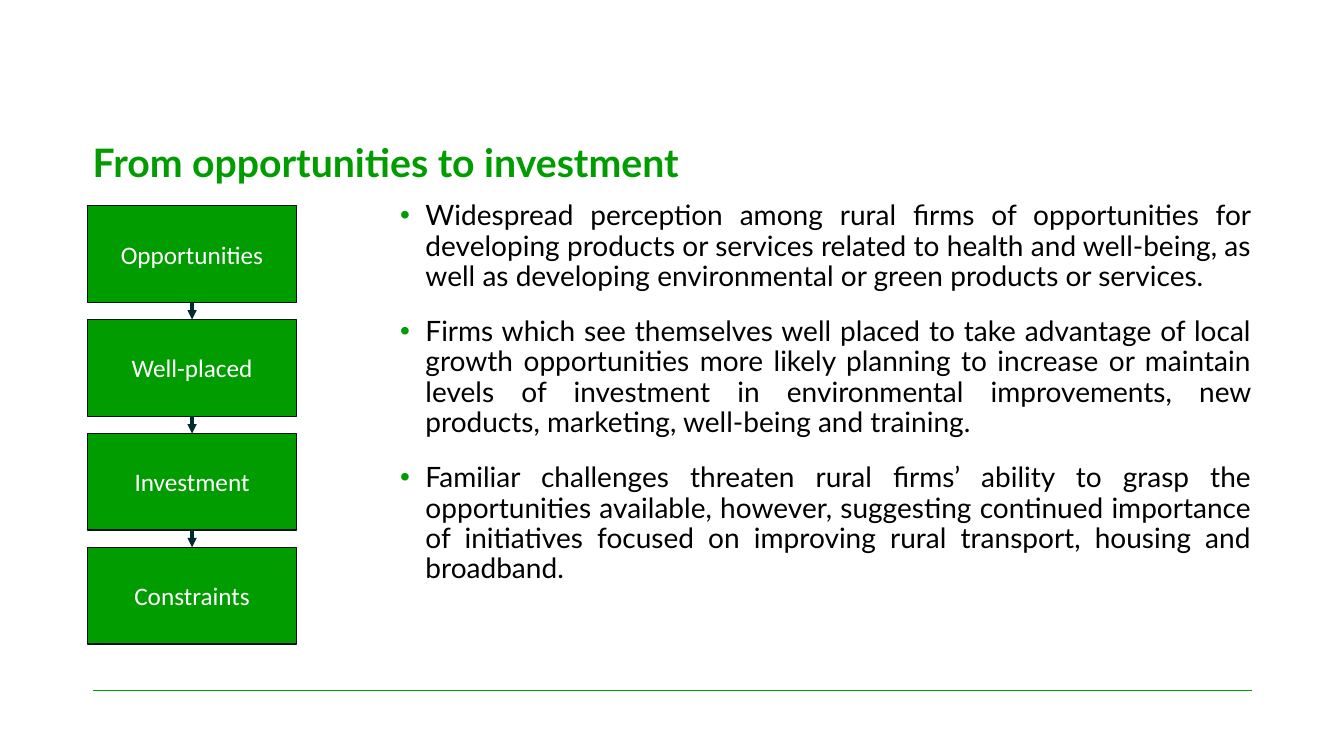
from lxml.etree import SubElement
from pptx import Presentation
from pptx.dml.color import RGBColor
from pptx.enum.shapes import MSO_CONNECTOR, MSO_SHAPE
from pptx.enum.text import MSO_ANCHOR, PP_ALIGN
from pptx.oxml.ns import qn
from pptx.util import Inches, Pt

TITLE = "From opportunities to investment"
STEPS = ["Opportunities", "Well-placed", "Investment", "Constraints"]
POINTS = [
    "Widespread perception among rural firms of opportunities for developing products or services "
    "related to health and well-being, as well as developing environmental or green products or services.",
    "Firms which see themselves well placed to take advantage of local growth opportunities more likely "
    "planning to increase or maintain levels of investment in environmental improvements, new products, "
    "marketing, well-being and training.",
    "Familiar challenges threaten rural firms’ ability to grasp the opportunities available, however, "
    "suggesting continued importance of initiatives focused on improving rural transport, housing and "
    "broadband.",
]

GREEN = RGBColor(0x00, 0x9C, 0x00)
BLACK = RGBColor(0x00, 0x00, 0x00)
WHITE = RGBColor(0xFF, 0xFF, 0xFF)
OUTLINE = RGBColor(0x00, 0x13, 0x15)
ARROW = RGBColor(0x00, 0x2C, 0x2F)

TITLE_FONT = {"name": "Lato", "size": Pt(28), "bold": True}
BODY_FONT = {"name": "Lato", "size": Pt(20)}
STEP_FONT = {"name": "Calibri", "size": Pt(18)}
NO_MARGINS = {f"margin_{side}": 0 for side in ("left", "top", "right", "bottom")}

STEP_LEFT, STEP_TOP, STEP_WIDTH, STEP_HEIGHT, STEP_PITCH = 0.87, 2.04, 2.07, 0.96, 1.13


def set_values(target, values):
    for name, value in values.items():
        setattr(target, name, value)


def write(para, text, font, color):
    span = para.add_run()
    span.text = text
    set_values(span.font, font)
    span.font.color.rgb = color


def add_text_box(page, left, top, width, height, anchor):
    box = page.shapes.add_textbox(Inches(left), Inches(top), Inches(width), Inches(height))
    set_values(box.text_frame, {"word_wrap": True, "vertical_anchor": anchor, **NO_MARGINS})
    return box.text_frame


def add_bullet(para):
    """Give the paragraph a green bullet with a hanging indent."""
    properties = para._p.get_or_add_pPr()
    properties.set("marL", str(Inches(0.25)))
    properties.set("indent", str(Inches(-0.25)))
    color = SubElement(properties, qn("a:buClr"))
    SubElement(color, qn("a:srgbClr"), val=str(GREEN))
    SubElement(properties, qn("a:buFont"), typeface="Arial")
    SubElement(properties, qn("a:buChar"), char="•")


def add_line(page, start, end, color, width):
    line = page.shapes.add_connector(
        MSO_CONNECTOR.STRAIGHT, *(Inches(value) for value in (*start, *end)))
    line.line.color.rgb = color
    line.line.width = Pt(width)
    SubElement(line._element.spPr, qn("a:effectLst"))
    return line


def add_step(page, index, label):
    box = page.shapes.add_shape(
        MSO_SHAPE.RECTANGLE, Inches(STEP_LEFT), Inches(STEP_TOP + index * STEP_PITCH),
        Inches(STEP_WIDTH), Inches(STEP_HEIGHT))
    box.shadow.inherit = False
    box.fill.solid()
    box.fill.fore_color.rgb = GREEN
    box.line.color.rgb = OUTLINE
    box.line.width = Pt(1)
    box.text_frame.vertical_anchor = MSO_ANCHOR.MIDDLE
    para = box.text_frame.paragraphs[0]
    para.alignment = PP_ALIGN.CENTER
    write(para, label, STEP_FONT, WHITE)
    return box


def join_steps(page, upper, lower):
    arrow = add_line(page, (0, 0), (0, 0), ARROW, 2.25)
    arrow.begin_connect(upper, 2)
    arrow.end_connect(lower, 0)
    SubElement(arrow.line._get_or_add_ln(), qn("a:tailEnd"), type="triangle")


def main():
    deck = Presentation()
    deck.slide_width, deck.slide_height = Inches(13.33), Inches(7.5)
    page = deck.slides.add_slide(deck.slide_layouts[6])

    add_line(page, (0.92, 6.85), (12.42, 6.85), GREEN, 1)

    title = add_text_box(page, 0.92, 0.72, 11.5, 1.13, MSO_ANCHOR.BOTTOM).paragraphs[0]
    title.line_spacing = 0.9
    write(title, TITLE, TITLE_FONT, GREEN)

    body = add_text_box(page, 3.97, 2, 8.44, 4.63, MSO_ANCHOR.TOP)
    for index, point in enumerate(POINTS):
        para = body.add_paragraph() if index else body.paragraphs[0]
        add_bullet(para)
        set_values(para, {"alignment": PP_ALIGN.JUSTIFY, "line_spacing": 0.9,
                          "space_before": Pt(10 if index else 0), "space_after": Pt(8)})
        write(para, point, BODY_FONT, BLACK)

    boxes = [add_step(page, index, label) for index, label in enumerate(STEPS)]
    for upper, lower in zip(boxes, boxes[1:]):
        join_steps(page, upper, lower)

    deck.save("out.pptx")


if __name__ == "__main__":
    main()
